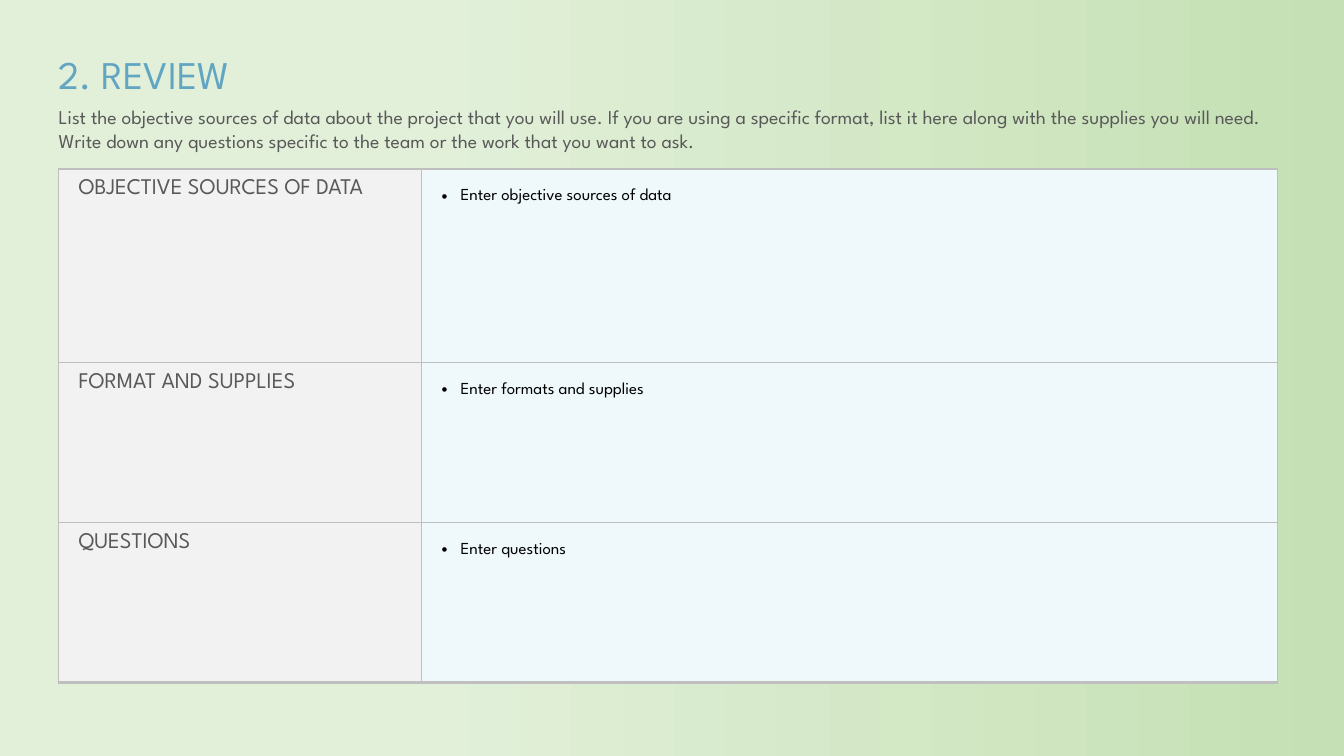
import dataclasses

import lxml.etree
import pptx
import pptx.dml.color
import pptx.enum.text
import pptx.oxml.ns
import pptx.util

Cm = pptx.util.Cm
Pt = pptx.util.Pt


@dataclasses.dataclass(frozen=True)
class Theme:
    font: str = "League Spartan"
    title_color: str = "61A5C3"
    label_color: str = "595959"
    entry_color: str = "000000"
    label_fill: str = "F2F2F2"
    entry_fill: str = "EFF9FB"
    border: str = "BFBFBF"
    gradient: tuple = ((0, "C5E0B4"), (0.69, "E2F0D9"))
    title_size: float = 28
    intro_size: float = 14
    label_size: float = 16
    entry_size: float = 12
    thin: float = 1
    thick: float = 2.25


def rgb(color):
    return pptx.dml.color.RGBColor.from_string(color)


def add_xml(parent, tag, **attributes):
    return lxml.etree.SubElement(parent, pptx.oxml.ns.qn(tag), attributes)


class ReviewSlide:
    def __init__(self, deck, theme):
        self.theme = theme
        self.slide = deck.slides.add_slide(deck.slide_layouts[6])

    def background(self):
        fill = self.slide.background.fill
        fill.gradient()
        fill.gradient_angle = 180
        for stop, (position, color) in zip(fill.gradient_stops, self.theme.gradient):
            stop.position = position
            stop.color.rgb = rgb(color)

    def style_text(self, frame, text, size, color):
        frame.text = text
        paragraph = frame.paragraphs[0]
        for run in paragraph.runs:
            run.font.name = self.theme.font
            run.font.size = Pt(size)
            run.font.color.rgb = rgb(color)
        return paragraph

    def text(self, text, left, top, width, height, size, color, wrap=True):
        box = self.slide.shapes.add_textbox(Cm(left), Cm(top), Cm(width), Cm(height))
        frame = box.text_frame
        frame.word_wrap = wrap
        frame.auto_size = pptx.enum.text.MSO_AUTO_SIZE.SHAPE_TO_FIT_TEXT
        frame.vertical_anchor = pptx.enum.text.MSO_ANCHOR.MIDDLE
        return self.style_text(frame, text, size, color)

    def bullet(self, paragraph):
        paragraph.line_spacing = Pt(18)
        properties = paragraph._p.get_or_add_pPr()
        indent = Cm(0.48)
        properties.set("marL", str(indent))
        properties.set("indent", str(-indent))
        add_xml(properties, "a:buFont", typeface="Arial")
        add_xml(properties, "a:buChar", char="•")

    def cell(self, cell, text, size, color, fill, bottom):
        cell.margin_left = Cm(0.51)
        cell.margin_top = cell.margin_right = cell.margin_bottom = Cm(0.25)
        paragraph = self.style_text(cell.text_frame, text, size, color)
        properties = cell._tc.get_or_add_tcPr()
        thin = self.theme.thin
        for side, width in (("L", thin), ("R", thin), ("T", thin), ("B", bottom)):
            line = add_xml(properties, f"a:ln{side}", w=str(Pt(width)))
            add_xml(add_xml(line, "a:solidFill"), "a:srgbClr", val=self.theme.border)
        cell.fill.solid()
        cell.fill.fore_color.rgb = rgb(fill)
        return paragraph

    def table(self, sections, left, top, widths, heights):
        theme = self.theme
        table = self.slide.shapes.add_table(
            len(sections), len(widths), Cm(left), Cm(top), Cm(sum(widths)), Cm(sum(heights))
        ).table
        for column, width in zip(table.columns, widths):
            column.width = Cm(width)
        for index, (label, entry) in enumerate(sections):
            table.rows[index].height = Cm(heights[index])
            bottom = theme.thick if index == len(sections) - 1 else theme.thin
            self.cell(table.cell(index, 0), label, theme.label_size,
                      theme.label_color, theme.label_fill, bottom)
            self.bullet(self.cell(table.cell(index, 1), entry, theme.entry_size,
                                  theme.entry_color, theme.entry_fill, bottom))


def main():
    deck = pptx.Presentation()
    deck.slide_width, deck.slide_height = Cm(33.87), Cm(19.05)
    theme = Theme()
    review = ReviewSlide(deck, theme)
    review.background()
    review.text(
        "List the objective sources of data about the project that you will use. "
        "If you are using a specific format, list it here along with the supplies you will need. "
        "Write down any questions specific to the team or the work that you want to ask.",
        1.23, 2.52, 31.04, 1.45, theme.intro_size, theme.label_color,
    )
    title = review.text("2. REVIEW", 1.23, 0.99, 5.18, 1.55,
                        theme.title_size, theme.title_color, wrap=False)
    title.line_spacing = 1.15
    review.table(
        (
            ("OBJECTIVE SOURCES OF DATA", "Enter objective sources of data"),
            ("FORMAT AND SUPPLIES", "Enter formats and supplies"),
            ("QUESTIONS", "Enter questions"),
        ),
        1.47, 4.26, (9.15, 21.57), (4.88, 4.03, 4.03),
    )
    deck.save("out.pptx")


if __name__ == "__main__":
    main()
